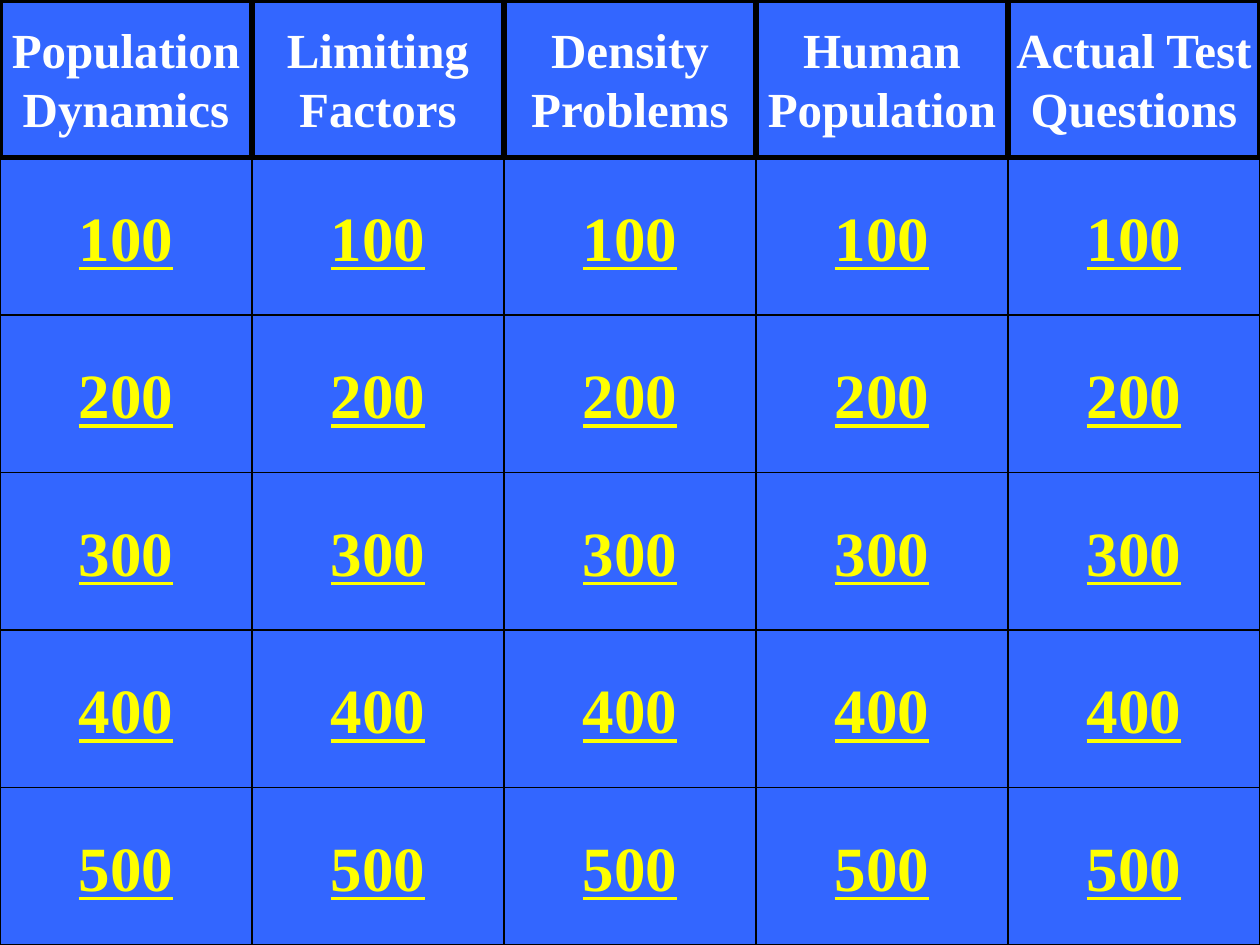
from pptx import Presentation
from pptx.dml.color import RGBColor
from pptx.enum.shapes import MSO_SHAPE
from pptx.enum.text import MSO_ANCHOR, PP_ALIGN
from pptx.util import Pt

COLORS = {"board": "3366FF", "border": "000000", "points": "FFFF00", "category": "FFFFFF"}
CATEGORIES = [
    "Population\nDynamics",
    "Limiting\nFactors",
    "Density\nProblems",
    "Human\nPopulation",
    "Actual Test\nQuestions",
]
POINTS = [100, 200, 300, 400, 500]
BOARD_WIDTH, BOARD_HEIGHT = 720, 540
CATEGORY_HEIGHT = 90

CATEGORY_FONT = {"name": "Times New Roman", "size": Pt(28), "bold": True}
POINTS_FONT = {"name": "Times New Roman", "size": Pt(36), "bold": True, "underline": True}


def color(role):
    """Return the colour that plays the given role."""
    return RGBColor.from_string(COLORS[role])


def add_tile(slide, box, preset, label, role, border, font_format):
    """Place one labelled tile of the board in the box."""
    tile = slide.shapes.add_shape(preset, *map(Pt, box))
    tile.shadow.inherit = False
    tile.fill.solid()
    tile.fill.fore_color.rgb = color("board")
    tile.line.color.rgb = color("border")
    tile.line.width = Pt(border)
    frame = tile.text_frame
    frame.text = label
    frame.word_wrap = False
    frame.vertical_anchor = MSO_ANCHOR.MIDDLE
    for paragraph in frame.paragraphs:
        paragraph.alignment = PP_ALIGN.CENTER
        for run in paragraph.runs:
            for attribute, value in font_format.items():
                setattr(run.font, attribute, value)
            run.font.color.rgb = color(role)


def add_points_grid(slide, left, top, width, height):
    """Fill the box with one button per category and point value."""
    column, row = width / len(CATEGORIES), height / len(POINTS)
    for i in range(len(CATEGORIES)):
        for j, points in enumerate(POINTS):
            box = (left + i * column, top + j * row, column, row)
            add_tile(slide, box, MSO_SHAPE.ACTION_BUTTON_CUSTOM, str(points),
                     "points", 0.75, POINTS_FONT)


def add_category_row(slide, left, top, width, height):
    """Fill the box with the category headings side by side."""
    column = width / len(CATEGORIES)
    for i, category in enumerate(CATEGORIES):
        box = (left + i * column, top, column, height)
        add_tile(slide, box, MSO_SHAPE.RECTANGLE, category,
                 "category", 3, CATEGORY_FONT)


def main():
    """Build the quiz board and save it."""
    deck = Presentation()
    deck.slide_width, deck.slide_height = Pt(BOARD_WIDTH), Pt(BOARD_HEIGHT)
    slide = deck.slides.add_slide(deck.slide_layouts[6])
    slide.background.fill.solid()
    slide.background.fill.fore_color.rgb = color("board")
    add_points_grid(slide, 0, CATEGORY_HEIGHT, BOARD_WIDTH, BOARD_HEIGHT - CATEGORY_HEIGHT)
    add_category_row(slide, 0, 0, BOARD_WIDTH, CATEGORY_HEIGHT)
    deck.save("out.pptx")


if __name__ == "__main__":
    main()
